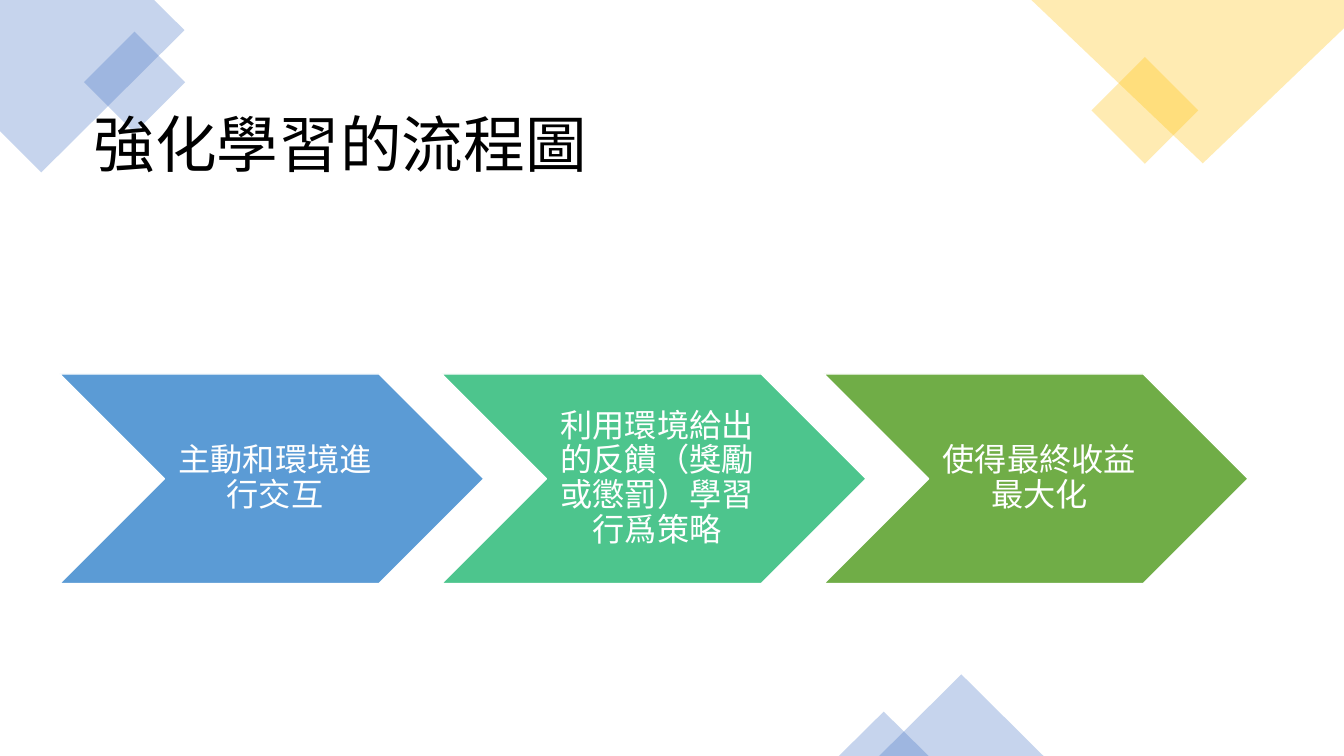
from dataclasses import dataclass

from lxml.etree import SubElement
from pptx import Presentation
from pptx.dml.color import RGBColor
from pptx.enum.shapes import MSO_SHAPE
from pptx.enum.text import MSO_ANCHOR, MSO_AUTO_SIZE, PP_ALIGN
from pptx.oxml.ns import qn
from pptx.shapes.autoshape import Shape
from pptx.slide import Slide
from pptx.util import Inches, Pt

COLORS = {
    "navy": "4472C4",
    "gold": "FFC000",
    "blue": "5B9BD5",
    "mint": "4DC58D",
    "green": "70AD47",
    "white": "FFFFFF",
    "black": "000000",
}
TITLE_FONT = "Noto Sans CJK TC"
STEP_FONT = "Calibri"
STEP_LEFT, STEP_TOP, STEP_PITCH = 0.59, 3.71, 3.79
STEP_WIDTH, STEP_HEIGHT = 4.21, 2.08


@dataclass(frozen=True)
class Corner:
    color: str
    points: tuple[tuple[float, float], ...]


@dataclass(frozen=True)
class Ornament:
    kind: MSO_SHAPE
    color: str
    left: float
    top: float
    width: float
    height: float
    rotation: float = 0


@dataclass(frozen=True)
class Step:
    text: str
    color: str


TOP_LEFT = Corner("navy", ((0, 0), (1.53, 0), (1.83, 0.3), (0.41, 1.71), (0, 1.3)))
TOP_RIGHT = Corner("gold", ((13.33, 0), (10.23, 0), (11.93, 1.62), (13.33, 0.28)))
ORNAMENTS = (
    Ornament(MSO_SHAPE.RECTANGLE, "navy", 0.98, 0.46, 0.71, 0.71, 315),
    Ornament(MSO_SHAPE.RECTANGLE, "gold", 10.98, 0.72, 0.75, 0.75, 315),
    Ornament(MSO_SHAPE.ISOSCELES_TRIANGLE, "navy", 8.72, 6.69, 1.63, 0.81),
    Ornament(MSO_SHAPE.ISOSCELES_TRIANGLE, "navy", 8.32, 7.06, 0.89, 0.44),
)
STEPS = (
    Step("主動和環境進行交互", "blue"),
    Step("利用環境給出的反饋（獎勵或懲罰）學習行爲策略", "mint"),
    Step("使得最終收益最大化", "green"),
)


def rgb(name: str) -> RGBColor:
    return RGBColor.from_string(COLORS[name])


def fill_solid(shape: Shape, color: str) -> None:
    shape.shadow.inherit = False
    shape.fill.solid()
    shape.fill.fore_color.rgb = rgb(color)


def fill_translucent(shape: Shape, color: str) -> None:
    """Fill at 30 % opacity, without an outline."""
    fill_solid(shape, color)
    shape.line.fill.background()
    srgb = shape.element.spPr.find(qn("a:solidFill")).find(qn("a:srgbClr"))
    SubElement(srgb, qn("a:alpha")).set("val", "30000")


def add_corner(page: Slide, corner: Corner) -> None:
    start, *rest = [(Inches(x), Inches(y)) for x, y in corner.points]
    builder = page.shapes.build_freeform(*start)
    builder.add_line_segments(rest, close=True)
    fill_translucent(builder.convert_to_shape(), corner.color)


def add_ornament(page: Slide, ornament: Ornament) -> None:
    shape = page.shapes.add_shape(
        ornament.kind,
        Inches(ornament.left),
        Inches(ornament.top),
        Inches(ornament.width),
        Inches(ornament.height),
    )
    shape.rotation = ornament.rotation
    fill_translucent(shape, ornament.color)


def add_step(page: Slide, step: Step, index: int) -> None:
    chevron = page.shapes.add_shape(
        MSO_SHAPE.CHEVRON,
        Inches(STEP_LEFT + index * STEP_PITCH),
        Inches(STEP_TOP),
        Inches(STEP_WIDTH),
        Inches(STEP_HEIGHT),
    )
    fill_solid(chevron, step.color)
    chevron.line.color.rgb = rgb("white")
    chevron.line.width = Pt(1)
    frame = chevron.text_frame
    frame.word_wrap = True
    frame.vertical_anchor = MSO_ANCHOR.MIDDLE
    frame.margin_left = Inches(0.1)
    frame.margin_top = frame.margin_right = frame.margin_bottom = Inches(0.03)
    para = frame.paragraphs[0]
    para.alignment = PP_ALIGN.CENTER
    para.line_spacing = 0.9
    span = para.add_run()
    span.text = step.text
    span.font.name = STEP_FONT
    span.font.size = Pt(23)
    span.font.color.rgb = rgb("white")


def add_title(page: Slide, text: str) -> None:
    """Format the title placeholder and bring it to the front."""
    title = page.shapes.title
    title.left, title.top = Inches(0.83), Inches(1)
    title.width, title.height = Inches(6.67), Inches(0.84)
    frame = title.text_frame
    frame.auto_size = MSO_AUTO_SIZE.NONE
    frame.vertical_anchor = MSO_ANCHOR.MIDDLE
    para = frame.paragraphs[0]
    para.alignment = PP_ALIGN.LEFT
    span = para.add_run()
    span.text = text
    span.font.size = Pt(44)
    span.font.color.rgb = rgb("black")
    span.font.name = TITLE_FONT
    SubElement(span.font._element, qn("a:ea")).set("typeface", TITLE_FONT)
    title.element.getparent().append(title.element)


def main() -> None:
    deck = Presentation()
    deck.slide_width, deck.slide_height = Inches(13.33), Inches(7.5)
    page = deck.slides.add_slide(deck.slide_layouts.get_by_name("Title Only"))
    for corner in (TOP_LEFT, TOP_RIGHT):
        add_corner(page, corner)
    for ornament in ORNAMENTS:
        add_ornament(page, ornament)
    for index, step in enumerate(STEPS):
        add_step(page, step, index)
    add_title(page, "強化學習的流程圖")
    deck.save("out.pptx")


if __name__ == "__main__":
    main()
